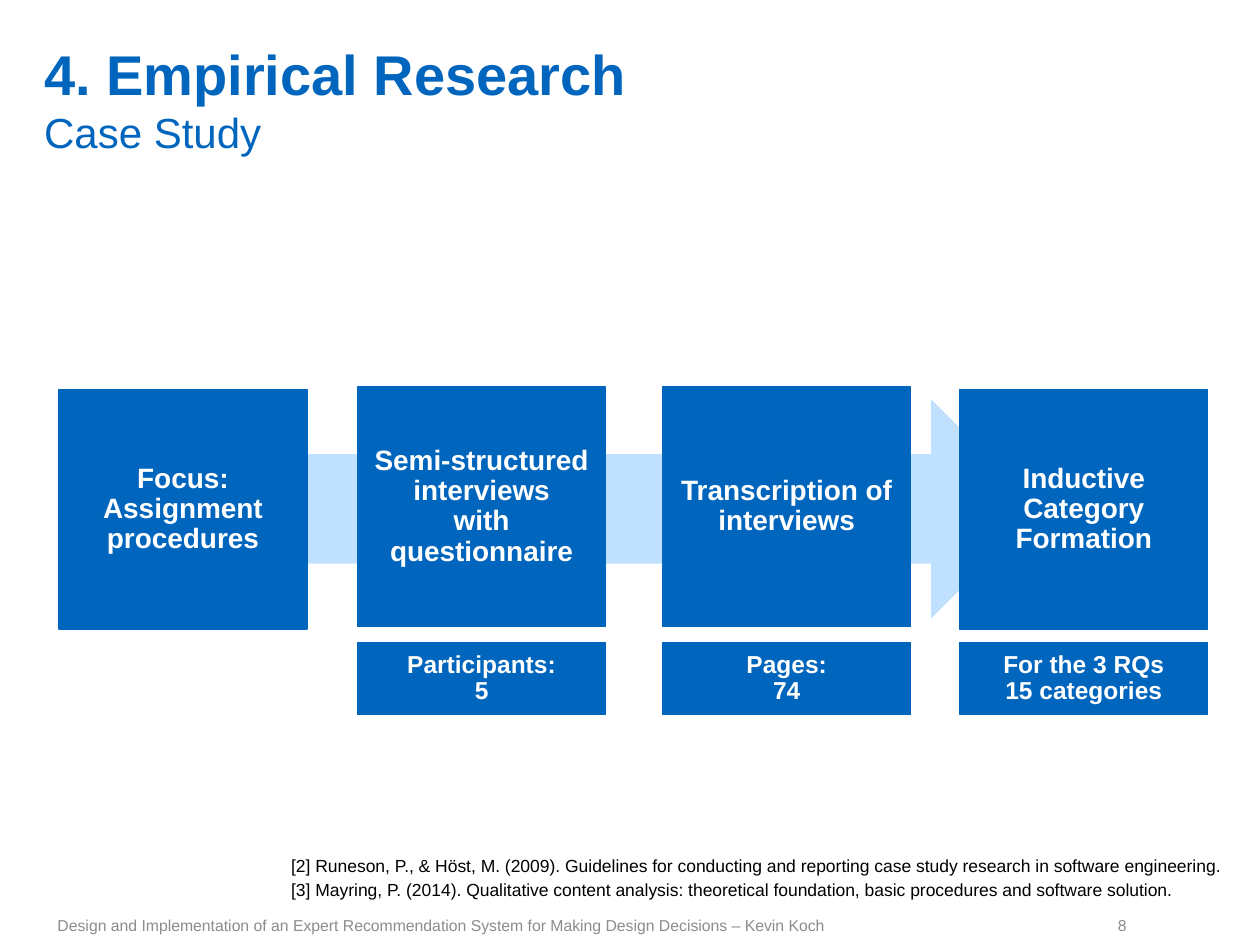
from dataclasses import dataclass

from pptx import Presentation
from pptx.dml.color import RGBColor
from pptx.enum.shapes import MSO_SHAPE
from pptx.enum.text import MSO_ANCHOR, MSO_AUTO_SIZE, PP_ALIGN
from pptx.slide import Slide
from pptx.util import Cm, Pt


@dataclass(frozen=True)
class Theme:
    font: str = "Arial"
    blue: RGBColor = RGBColor(0x00, 0x65, 0xBD)
    pale: RGBColor = RGBColor(0xBF, 0xE1, 0xFF)
    white: RGBColor = RGBColor(0xFF, 0xFF, 0xFF)
    black: RGBColor = RGBColor(0, 0, 0)
    grey: RGBColor = RGBColor(0x8C, 0x8C, 0x8C)
    title: int = 32
    subtitle: int = 24
    step: int = 16
    result: int = 14
    source: int = 10
    footer: int = 9


@dataclass(frozen=True)
class Step:
    left: float
    top: float
    text: str
    result: str = ""


T = Theme()
BOX_W, STEP_H = 5, 4.83
RESULT_TOP, RESULT_H = 12.95, 1.45

STEPS = [
    Step(1.19, 7.85, "Focus:\vAssignment procedures"),
    Step(7.21, 7.8, "Semi-structured interviews\vwith questionnaire", "Participants:\v5"),
    Step(13.36, 7.8, "Transcription of interviews", "Pages:\v74"),
    Step(19.35, 7.85, "Inductive Category Formation", "For the 3 RQs\v15 categories"),
]
SOURCES = (
    "[2] Runeson, P., & Höst, M. (2009). Guidelines for conducting and reporting "
    "case study research in software engineering.\v"
    "[3] Mayring, P. (2014). Qualitative content analysis: theoretical foundation, "
    "basic procedures and software solution."
)
FOOTER = (
    "Design and Implementation of an Expert Recommendation System "
    "for Making Design Decisions – Kevin Koch"
)


def set_margins(tf, x: float, y: float) -> None:
    tf.margin_left = tf.margin_right = Cm(x)
    tf.margin_top = tf.margin_bottom = Cm(y)


def write(tf, text: str, size: int, color: RGBColor, align=PP_ALIGN.LEFT,
          spacing: float = 1.0, bold: bool = False) -> None:
    tf.word_wrap = True
    p = tf.paragraphs[0]
    p.text = text
    p.alignment = align
    p.line_spacing = spacing
    p.font.name = T.font
    p.font.size = Pt(size)
    p.font.bold = bold
    p.font.color.rgb = color


def add_title(s: Slide, title: str, subtitle: str) -> None:
    sp = s.shapes.title
    sp.left, sp.top, sp.width, sp.height = Cm(0.89), Cm(0.79), Cm(21.77), Cm(2.39)
    tf = sp.text_frame
    set_margins(tf, 0, 0)
    tf.word_wrap = True
    tf.auto_size = MSO_AUTO_SIZE.SHAPE_TO_FIT_TEXT
    tf.vertical_anchor = MSO_ANCHOR.TOP
    p = tf.paragraphs[0]
    p.alignment = PP_ALIGN.LEFT
    p.font.name = T.font
    p.font.color.rgb = T.blue
    for text, size, bold in ((title, T.title, True), (subtitle, T.subtitle, False)):
        if p.runs:
            p.add_line_break()
        r = p.add_run()
        r.text = text
        r.font.size = Pt(size)
        r.font.bold = bold


def add_arrow(s: Slide) -> None:
    sp = s.shapes.add_shape(MSO_SHAPE.RIGHT_ARROW, Cm(2.13), Cm(8.05), Cm(18.85), Cm(4.42))
    sp.shadow.inherit = False
    sp.fill.solid()
    sp.fill.fore_color.rgb = T.pale
    sp.line.fill.background()


def add_box(s: Slide, left: float, top: float, height: float, text: str, size: int) -> None:
    sp = s.shapes.add_shape(MSO_SHAPE.RECTANGLE, Cm(left), Cm(top), Cm(BOX_W), Cm(height))
    sp.shadow.inherit = False
    sp.fill.solid()
    sp.fill.fore_color.rgb = T.blue
    sp.line.color.rgb = T.blue
    sp.line.width = Pt(0.75)
    tf = sp.text_frame
    set_margins(tf, 0.3, 0.2)
    tf.vertical_anchor = MSO_ANCHOR.MIDDLE
    write(tf, text, size, T.white, PP_ALIGN.CENTER, 0.9, True)


def add_step(s: Slide, step: Step) -> None:
    add_box(s, step.left, step.top, STEP_H, step.text, T.step)
    if step.result:
        add_box(s, step.left, RESULT_TOP, RESULT_H, step.result, T.result)


def add_sources(s: Slide) -> None:
    tf = s.shapes.add_textbox(Cm(5.87), Cm(17.17), Cm(18.82), Cm(0.94)).text_frame
    set_margins(tf, 0, 0)
    tf.auto_size = MSO_AUTO_SIZE.SHAPE_TO_FIT_TEXT
    write(tf, SOURCES, T.source, T.black, spacing=1.14)


def add_footer(s: Slide, left: float, width: float, text: str, align=PP_ALIGN.LEFT) -> None:
    tf = s.shapes.add_textbox(Cm(left), Cm(18.24), Cm(width), Cm(0.81)).text_frame
    tf.vertical_anchor = MSO_ANCHOR.MIDDLE
    write(tf, text, T.footer, T.grey, align)


def main() -> None:
    prs = Presentation()
    prs.slide_width, prs.slide_height = Cm(25.4), Cm(19.05)
    s = prs.slides.add_slide(prs.slide_layouts[5])
    add_title(s, "4. Empirical Research", "Case Study")
    add_arrow(s)
    for step in STEPS:
        add_step(s, step)
    add_sources(s)
    add_footer(s, 0.91, 20.35, FOOTER)
    add_footer(s, 21.26, 1.7, "8", PP_ALIGN.RIGHT)
    prs.save("out.pptx")


if __name__ == "__main__":
    main()
